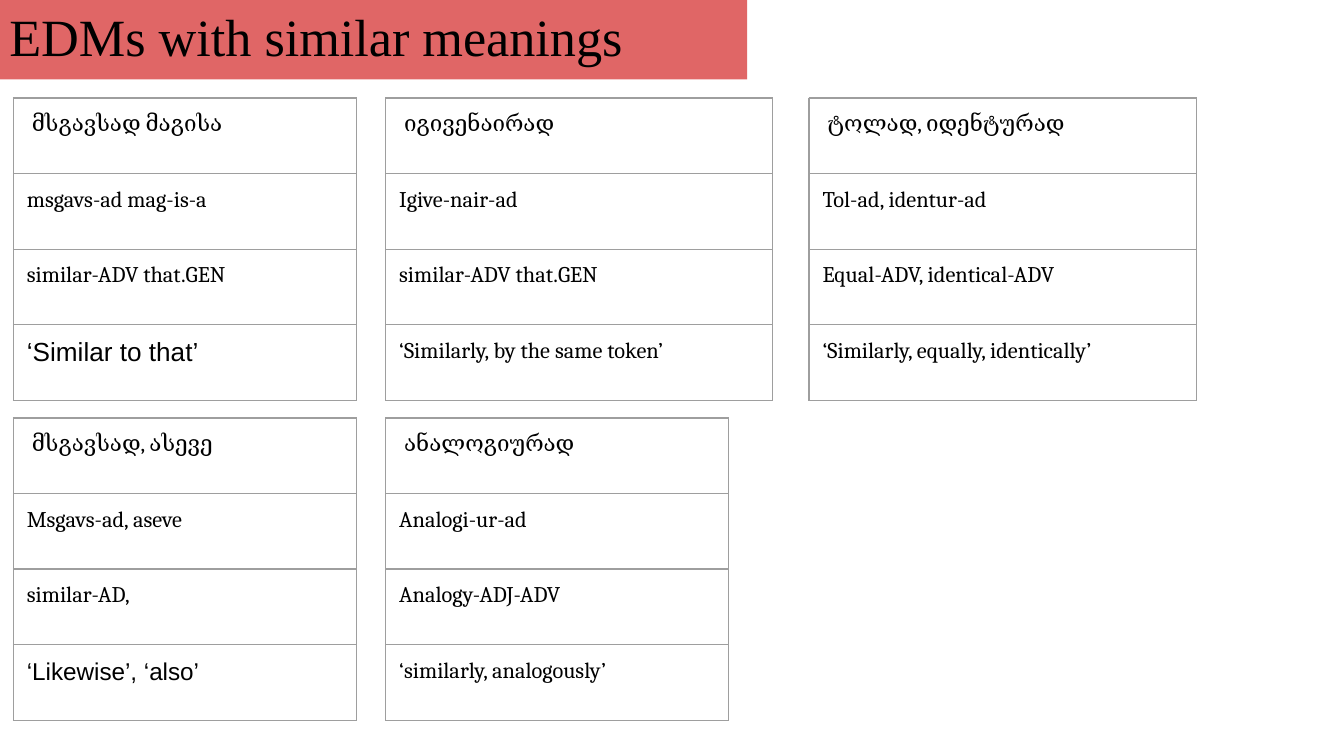
from dataclasses import dataclass

from lxml import etree
from pptx import Presentation
from pptx.dml.color import RGBColor
from pptx.enum.shapes import MSO_SHAPE
from pptx.enum.text import MSO_ANCHOR, PP_ALIGN
from pptx.oxml.ns import qn
from pptx.util import Inches, Pt

RECTANGLE = MSO_SHAPE.RECTANGLE
MIDDLE = MSO_ANCHOR.MIDDLE
LEFT = PP_ALIGN.LEFT


@dataclass(frozen=True)
class Theme:
    """Colours, fonts and type sizes of the slide."""
    banner: str = "E06666"
    text: str = "000000"
    border: str = "9E9E9E"
    title_font: str = "Times New Roman"
    gloss_font: str = "Cambria"
    plain_font: str = "Arial"
    title_size: int = 28
    gloss_size: int = 12
    border_width: float = 0.75


THEME = Theme()
SLIDE_W = 10
SLIDE_H = SLIDE_W * 9 / 16
COLUMNS = (0.1, 2.87, 6.02)
ROWS = (0.73, 3.11)
NARROW, WIDE = 2.55, 2.88
LINE_H = SLIDE_H / 10
CELL_PAD = 0.1

# (grid column, grid row, width, lines, size of a plain last line)
MARKERS = (
    (0, 0, NARROW, (" მსგავსად მაგისა", "msgavs-ad mag-is-a",
                    "similar-ADV that.GEN", "‘Similar to that’"), 14),
    (1, 0, WIDE, (" იგივენაირად", "Igive-nair-ad",
                  "similar-ADV that.GEN", "‘Similarly, by the same token’"), None),
    (2, 0, WIDE, (" ტოლად, იდენტურად", "Tol-ad, identur-ad",
                  "Equal-ADV, identical-ADV", "‘Similarly, equally, identically’"), None),
    (0, 1, NARROW, (" მსგავსად, ასევე", "Msgavs-ad, aseve",
                    "similar-AD,", "‘Likewise’, ‘also’"), 13),
    (1, 1, NARROW, (" ანალოგიურად", "Analogi-ur-ad",
                    "Analogy-ADJ-ADV", "‘similarly, analogously’"), None),
)


def add_run(p, text, font, size):
    """Add one run of text in the theme's text colour."""
    r = p.add_run()
    r.text = text
    r.font.name = font
    r.font.size = Pt(size)
    r.font.color.rgb = RGBColor.from_string(THEME.text)


def add_borders(cell):
    """Draw the same thin line on all four sides of a cell."""
    tc_pr = cell._tc.get_or_add_tcPr()
    for side in ("lnL", "lnR", "lnT", "lnB"):
        ln = etree.SubElement(tc_pr, qn(f"a:{side}"), w=str(Pt(THEME.border_width)))
        fill = etree.SubElement(ln, qn("a:solidFill"))
        etree.SubElement(fill, qn("a:srgbClr"), val=THEME.border)


def add_banner(s, box, text):
    """Place the title on its coloured banner."""
    sp = s.shapes.add_shape(RECTANGLE, *map(Inches, box))
    sp.shadow.inherit = False
    sp.fill.solid()
    sp.fill.fore_color.rgb = RGBColor.from_string(THEME.banner)
    sp.line.fill.background()
    tf = sp.text_frame
    tf.word_wrap = True
    tf.vertical_anchor = MIDDLE
    tf.margin_left = tf.margin_right = Inches(0.07)
    tf.margin_top = tf.margin_bottom = Inches(0.04)
    p = tf.paragraphs[0]
    p.alignment = LEFT
    p.line_spacing = 0.9
    add_run(p, text, THEME.title_font, THEME.title_size)


def add_gloss(s, box, lines, plain_size):
    """Place a one-column table that glosses a marker line by line."""
    table = s.shapes.add_table(len(lines), 1, *map(Inches, box)).table
    table.first_row = table.horz_banding = False
    for i, text in enumerate(lines):
        table.rows[i].height = Inches(box[3] / len(lines))
        cell = table.cell(i, 0)
        add_borders(cell)
        cell.fill.background()
        cell.margin_left = cell.margin_right = Inches(CELL_PAD)
        cell.margin_top = cell.margin_bottom = Inches(CELL_PAD)
        p = cell.text_frame.paragraphs[0]
        if plain_size and i == len(lines) - 1:
            add_run(p, text, THEME.plain_font, plain_size)
        else:
            p.space_after = Pt(12)
            add_run(p, text, THEME.gloss_font, THEME.gloss_size)


def main():
    """Build the slide and save it."""
    prs = Presentation()
    prs.slide_width, prs.slide_height = Inches(SLIDE_W), Inches(SLIDE_H)
    s = prs.slides.add_slide(prs.slide_layouts[6])
    add_banner(s, (0, 0, 5.56, 0.59), "EDMs with similar meanings")
    for col, row, width, lines, plain_size in MARKERS:
        box = (COLUMNS[col], ROWS[row], width, LINE_H * len(lines))
        add_gloss(s, box, lines, plain_size)
    prs.save("out.pptx")


if __name__ == "__main__":
    main()
